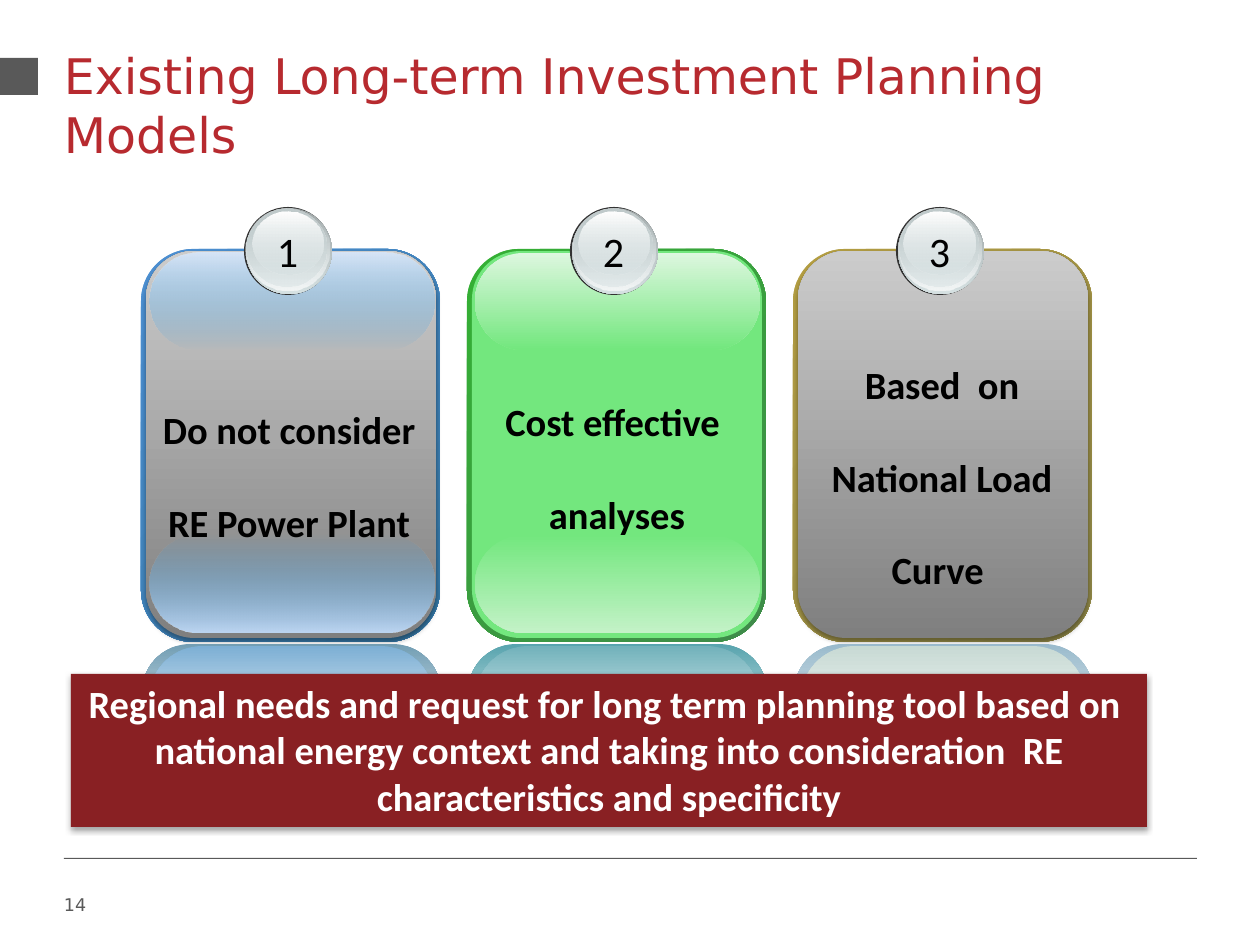
from dataclasses import dataclass
from typing import Any, NamedTuple, Optional, Union

import pptx
import pptx.dml.color
import pptx.enum.shapes
import pptx.enum.text
import pptx.oxml
import pptx.oxml.ns
import pptx.util

RGBColor = pptx.dml.color.RGBColor
Align = pptx.enum.text.PP_ALIGN
Anchor = pptx.enum.text.MSO_ANCHOR
Geometry = pptx.enum.shapes.MSO_SHAPE

EMU_PER_PX = 914400 / 126
CARD_LEFT = 141
CARD_PITCH = 326

WHITE = RGBColor(0xFF, 0xFF, 0xFF)
BLACK = RGBColor(0x00, 0x00, 0x00)
SLATE = RGBColor(0x59, 0x59, 0x59)
TITLE_RED = RGBColor(0xB7, 0x2A, 0x2F)
BANNER_RED = RGBColor(0x89, 0x20, 0x23)
RIM = RGBColor(0x33, 0x33, 0x33)
DARK_GRAY = RGBColor(0x7F, 0x7F, 0x7F)
LIGHT_GRAY = RGBColor(0xCC, 0xCC, 0xCC)
MIST = RGBColor(0xD6, 0xE1, 0xE2)
STEEL = RGBColor(0x99, 0xA1, 0xA2)
PEARL = RGBColor(0xF2, 0xF5, 0xF5)
SILVER = RGBColor(0xC1, 0xCB, 0xCC)
SKY = RGBColor(0x3C, 0xA1, 0xE6)
PALE_SKY_TOP = RGBColor(0xD7, 0xE5, 0xF7)
PALE_SKY_BOTTOM = RGBColor(0xBD, 0xD6, 0xF3)
BLUE_START = RGBColor(0x4E, 0x91, 0xD4)
BLUE_END = RGBColor(0x34, 0x77, 0xA4)
BLUE_REFLECTION = RGBColor(0x72, 0x9E, 0xB4)
BLUE_SHEEN = RGBColor(0x7D, 0xAF, 0xD4)
GREEN = RGBColor(0x73, 0xE7, 0x7E)
PALE_GREEN_TOP = RGBColor(0xDD, 0xF7, 0xDF)
PALE_GREEN_BOTTOM = RGBColor(0xC3, 0xF2, 0xC7)
GREEN_START = RGBColor(0x34, 0xB0, 0x34)
GREEN_END = RGBColor(0x3F, 0x8B, 0x4A)
TEAL_REFLECTION = RGBColor(0x58, 0xA4, 0xAE)
TEAL_SHEEN = RGBColor(0x72, 0xB2, 0xBB)
GOLD_START = RGBColor(0xB5, 0x9F, 0x43)
GOLD_END = RGBColor(0x8F, 0x88, 0x49)
GRAY_REFLECTION = RGBColor(0x99, 0xBA, 0xCC)
GRAY_SHEEN = RGBColor(0xC8, 0xDA, 0xD4)


class Box(NamedTuple):
    left: int
    top: int
    width: int
    height: int

    def shifted(self, offset: int) -> "Box":
        return self._replace(left=self.left + offset)


class Gradient(NamedTuple):
    start: RGBColor
    end: RGBColor
    angle: int = 90
    start_alpha: int = 100
    end_alpha: int = 100


Fill = Union[RGBColor, Gradient]


@dataclass
class Card:
    number: str
    lines: list[str]
    frame: Gradient
    face: Fill
    gloss: Optional[tuple[Gradient, Gradient]]
    reflection: RGBColor
    sheen: RGBColor
    text_box: Optional[Box]


FRAME = Box(0, 249, 299, 393)
FACE = Box(5, 251, 290, 387)
GLOSSES = [Box(8, 535, 285, 98), Box(8, 253, 285, 97)]
REFLECTION = Box(1, 644, 299, 120)
SHEEN = Box(8, 646, 285, 107)
NUMBER = Box(122, 219, 49, 63)
BADGE_LAYERS = [
    (Box(103, 207, 88, 88), RIM),
    (Box(105, 208, 86, 86), Gradient(STEEL, MIST)),
    (Box(105, 208, 83, 83), Gradient(MIST, PEARL, start_alpha=0)),
    (Box(106, 209, 79, 78), Gradient(SILVER, MIST, end_alpha=48)),
    (Box(111, 212, 71, 63), Gradient(WHITE, MIST, end_alpha=38)),
]
GRAY_FACE = Gradient(DARK_GRAY, LIGHT_GRAY, 270)
CARDS = [
    Card("1", ["Do not consider RE Power Plant"], Gradient(BLUE_START, BLUE_END, 45), GRAY_FACE,
         (Gradient(SKY, PALE_SKY_BOTTOM, start_alpha=0), Gradient(PALE_SKY_TOP, SKY, end_alpha=0)),
         BLUE_REFLECTION, BLUE_SHEEN, Box(6, 354, 284, 199)),
    Card("2", ["Cost effective ", "analyses"], Gradient(GREEN_START, GREEN_END, 45), GREEN,
         (Gradient(GREEN, PALE_GREEN_BOTTOM), Gradient(PALE_GREEN_TOP, GREEN)),
         TEAL_REFLECTION, TEAL_SHEEN, None),
    Card("3", ["Based  on National Load Curve "], Gradient(GOLD_START, GOLD_END, 45), GRAY_FACE,
         None, GRAY_REFLECTION, GRAY_SHEEN, Box(7, 309, 284, 280)),
]

TITLE_FONT = {"name": "DejaVu Sans", "size": pptx.util.Pt(28)}
PAGE_FONT = {"name": "DejaVu Sans", "size": pptx.util.Pt(10)}
NUMBER_FONT = {"name": "Calibri", "size": pptx.util.Pt(24)}
BODY_FONT = {"name": "Calibri", "size": pptx.util.Pt(22), "bold": True}
CENTERED = {"alignment": Align.CENTER}
DOUBLE_SPACED = {"alignment": Align.CENTER, "line_spacing": 2.0}
WRAPPED = {"word_wrap": True, "vertical_anchor": Anchor.TOP}
UNWRAPPED = {"word_wrap": False}
FLUSH = {**WRAPPED, "margin_left": 0, "margin_right": 0}


def emu(px: int) -> int:
    return round(px * EMU_PER_PX)


def apply_format(target: Any, values: dict[str, Any]) -> None:
    for name, value in values.items():
        setattr(target, name, value)


def set_gradient(shape: Any, gradient: Gradient) -> None:
    stops = "".join(
        f'<a:gs pos="{position}"><a:srgbClr val="{color}"><a:alpha val="{alpha * 1000}"/></a:srgbClr></a:gs>'
        for position, color, alpha in (
            (0, gradient.start, gradient.start_alpha),
            (100000, gradient.end, gradient.end_alpha),
        )
    )
    element = pptx.oxml.parse_xml(
        f'<a:gradFill {pptx.oxml.ns.nsdecls("a")} rotWithShape="1"><a:gsLst>{stops}</a:gsLst>'
        f'<a:lin ang="{gradient.angle * 60000}" scaled="0"/></a:gradFill>'
    )
    shape.fill.solid()
    properties = shape.element.spPr
    properties.replace(properties.find(pptx.oxml.ns.qn("a:solidFill")), element)


def add_shadow(shape: Any) -> None:
    effects = shape.element.spPr.find(pptx.oxml.ns.qn("a:effectLst"))
    effects.append(pptx.oxml.parse_xml(
        f'<a:outerShdw {pptx.oxml.ns.nsdecls("a")} blurRad="39370" dist="22860" dir="5400000" rotWithShape="0">'
        '<a:srgbClr val="000000"><a:alpha val="35000"/></a:srgbClr></a:outerShdw>'
    ))


def draw_shape(shapes: Any, geometry: Any, box: Box, fill: Fill, rounding: Optional[float] = None) -> Any:
    shape = shapes.add_shape(geometry, *map(emu, box))
    shape.shadow.inherit = False
    shape.line.fill.background()
    if rounding is not None:
        shape.adjustments[0] = rounding
    if isinstance(fill, Gradient):
        set_gradient(shape, fill)
    else:
        shape.fill.solid()
        shape.fill.fore_color.rgb = fill
    return shape


def write_text(shape: Any, lines: list[str], font: dict, color: RGBColor, frame: dict, layout: dict) -> None:
    text_frame = shape.text_frame
    apply_format(text_frame, frame)
    text_frame.text = "\n".join(lines)
    for paragraph in text_frame.paragraphs:
        apply_format(paragraph, layout)
        apply_format(paragraph.font, font)
        paragraph.font.color.rgb = color


def draw_text(shapes: Any, box: Box, lines: list[str], font: dict, color: RGBColor, frame: dict, layout: dict) -> None:
    write_text(shapes.add_textbox(*map(emu, box)), lines, font, color, frame, layout)


def draw_card(slide: Any, card: Card, left: int) -> None:
    shapes = slide.shapes.add_group_shape().shapes
    rounded = Geometry.ROUNDED_RECTANGLE
    draw_shape(shapes, rounded, FRAME.shifted(left), card.frame, 0.175)
    face = draw_shape(shapes, rounded, FACE.shifted(left), card.face, 0.167)
    if isinstance(card.face, Gradient):
        add_shadow(face)
    for box, gloss in zip(GLOSSES, card.gloss or ()):
        draw_shape(shapes, rounded, box.shifted(left), gloss, 0.5)
    draw_shape(shapes, rounded, REFLECTION.shifted(left), Gradient(card.reflection, WHITE), 0.404)
    draw_shape(shapes, rounded, SHEEN.shifted(left), Gradient(card.sheen, WHITE), 0.5)
    for box, fill in BADGE_LAYERS:
        draw_shape(shapes, Geometry.OVAL, box.shifted(left), fill)
    draw_text(shapes, NUMBER.shifted(left), [card.number], NUMBER_FONT, BLACK, UNWRAPPED, CENTERED)
    if card.text_box:
        draw_text(shapes, card.text_box.shifted(left), card.lines, BODY_FONT, BLACK, WRAPPED, DOUBLE_SPACED)
    else:
        write_text(face, card.lines, BODY_FONT, BLACK, UNWRAPPED, DOUBLE_SPACED)


def main() -> None:
    presentation = pptx.Presentation()
    apply_format(presentation, {"slide_width": emu(1260), "slide_height": emu(945)})
    slide = presentation.slides.add_slide(presentation.slide_layouts[6])
    for box in (Box(0, 58, 38, 37), Box(64, 858, 1133, 1)):
        draw_shape(slide.shapes, Geometry.RECTANGLE, box, SLATE)
    draw_text(slide.shapes, Box(64, 888, 294, 66), ["14"], PAGE_FONT, SLATE, FLUSH, {})
    draw_text(slide.shapes, Box(64, 39, 1134, 122), ["Existing Long-term Investment Planning Models"],
              TITLE_FONT, TITLE_RED, FLUSH, {})
    for index, card in enumerate(CARDS):
        draw_card(slide, card, CARD_LEFT + index * CARD_PITCH)
    banner = draw_shape(slide.shapes, Geometry.RECTANGLE, Box(71, 674, 1076, 153), BANNER_RED)
    add_shadow(banner)
    write_text(banner, ["Regional needs and request for long term planning tool based on  national energy context "
                        "and taking into consideration  RE characteristics and specificity"],
               BODY_FONT, WHITE, WRAPPED, CENTERED)
    presentation.save("out.pptx")


if __name__ == "__main__":
    main()
